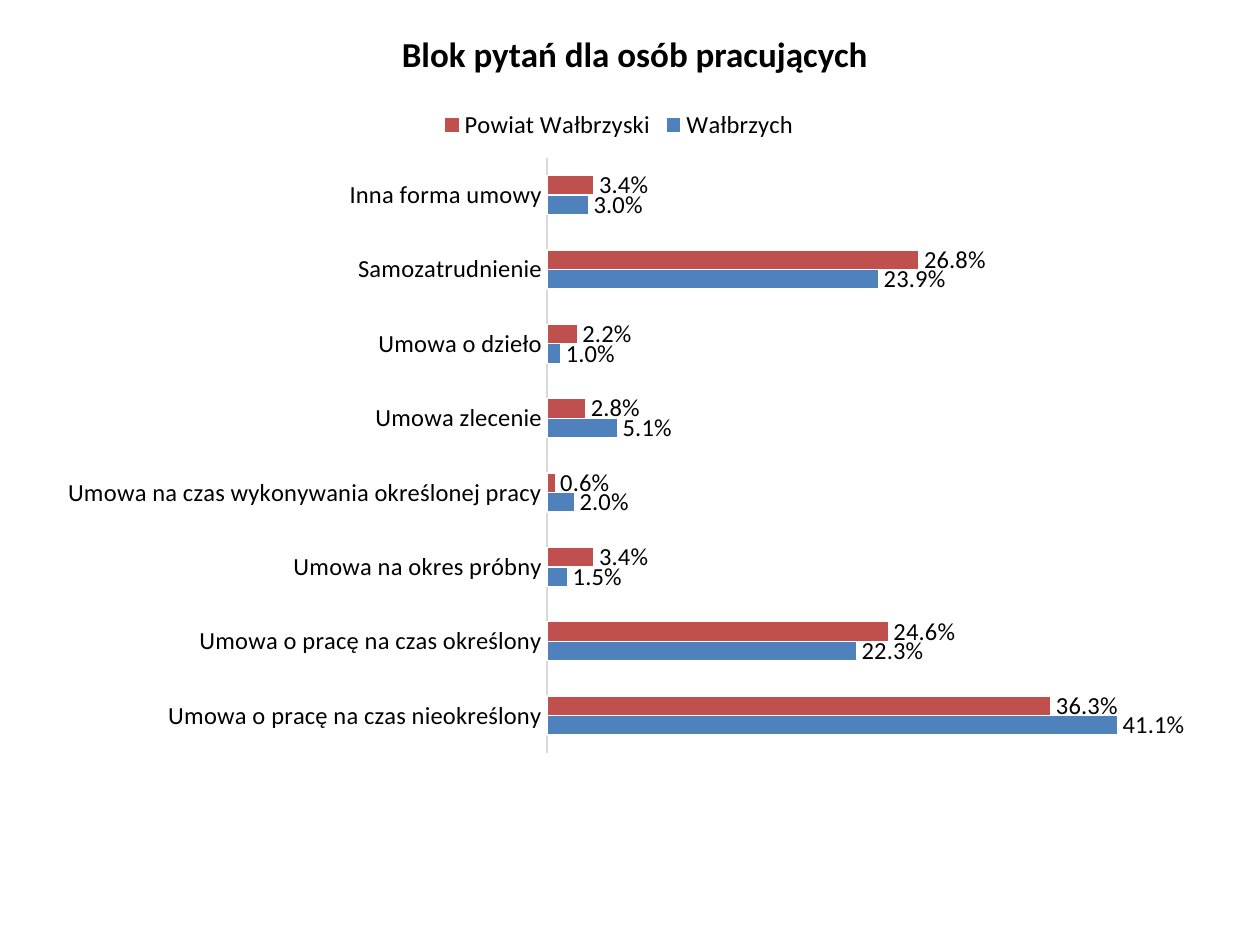
import pptx
import pptx.util
import pptx.dml.color
import pptx.enum.text
import pptx.enum.chart
import pptx.chart.data
import pptx.oxml

RGB = pptx.dml.color.RGBColor
BLACK = RGB(0x00, 0x00, 0x00)
WHITE = RGB(0xFF, 0xFF, 0xFF)
GREY = RGB(0xD9, 0xD9, 0xD9)
BLUE = RGB(0x4F, 0x81, 0xBD)
RED = RGB(0xC0, 0x50, 0x4D)
SCALE = 914400 // 126
CHART_NS = "http://schemas.openxmlformats.org/drawingml/2006/chart"

KINDS = [
    "Umowa o pracę na czas nieokreślony",
    "Umowa o pracę na czas określony",
    "Umowa na okres próbny",
    "Umowa na czas wykonywania określonej pracy",
    "Umowa zlecenie",
    "Umowa o dzieło",
    "Samozatrudnienie",
    "Inna forma umowy",
]
SERIES = [
    ("Wałbrzych", BLUE, (0.411, 0.223, 0.015, 0.02, 0.051, 0.01, 0.239, 0.03)),
    ("Powiat Wałbrzyski", RED,
     (0.363, 0.246, 0.034, 0.006, 0.028, 0.022, 0.268, 0.034)),
]


class Deck:
    font = "Calibri"

    def __init__(self, wide, high):
        self.show = pptx.Presentation()
        self.show.slide_width = wide * SCALE
        self.show.slide_height = high * SCALE
        self.slide = self.show.slides.add_slide(self.show.slide_layouts[6])

    def style(self, font, size, bold=False):
        font.name = self.font
        font.size = pptx.util.Pt(size)
        font.bold = bold
        font.color.rgb = BLACK

    def title(self, text, box, size):
        frame = self.slide.shapes.add_textbox(*(n * SCALE for n in box)).text_frame
        frame.word_wrap = True
        frame.auto_size = pptx.enum.text.MSO_AUTO_SIZE.SHAPE_TO_FIT_TEXT
        line = frame.paragraphs[0]
        line.text = text
        line.alignment = pptx.enum.text.PP_ALIGN.CENTER
        self.style(line.runs[0].font, size, bold=True)

    def bars(self, kinds, series, box, plot, size):
        data = pptx.chart.data.CategoryChartData(number_format="0.0%")
        data.categories = kinds
        for name, _, values in series:
            data.add_series(name, values)
        chart = self.slide.shapes.add_chart(
            pptx.enum.chart.XL_CHART_TYPE.BAR_CLUSTERED,
            *(n * SCALE for n in box), data).chart
        self.style(chart.font, size)
        chart.has_title = False
        chart.has_legend = True
        chart.legend.position = pptx.enum.chart.XL_LEGEND_POSITION.TOP
        chart.legend.include_in_layout = False
        self.axes(chart)
        bars = chart.plots[0]
        bars.gap_width = 182
        bars.vary_by_categories = False
        for item, (_, color, _) in zip(bars.series, series):
            self.paint(item, color)
        self.place(chart, box, plot)

    def axes(self, chart):
        none = pptx.enum.chart.XL_TICK_MARK.NONE
        kinds = chart.category_axis
        kinds.major_tick_mark = none
        kinds.minor_tick_mark = none
        kinds.format.line.color.rgb = GREY
        kinds.format.line.width = pptx.util.Pt(0.75)
        values = chart.value_axis
        values.minimum_scale = 0
        values.maximum_scale = 0.45
        values.has_major_gridlines = False
        values.visible = False

    def paint(self, item, color):
        item.format.fill.solid()
        item.format.fill.fore_color.rgb = color
        item.format.line.color.rgb = WHITE
        item.format.line.width = pptx.util.Pt(0.75)
        labels = item.data_labels
        labels.show_value = True
        labels.number_format = "0.0%"
        labels.number_format_is_linked = False
        labels.position = pptx.enum.chart.XL_LABEL_POSITION.OUTSIDE_END

    def place(self, chart, box, plot):
        """Fix the inner plot area at the slide position given by plot."""
        left, top, wide, high = box
        parts = {
            "x": (plot[0] - left) / wide,
            "y": (plot[1] - top) / high,
            "w": plot[2] / wide,
            "h": plot[3] / high,
        }
        tags = '<c:layoutTarget val="inner"/><c:xMode val="edge"/><c:yMode val="edge"/>'
        tags += "".join(f'<c:{key} val="{n:.4f}"/>' for key, n in parts.items())
        layout = pptx.oxml.parse_xml(
            f'<c:layout xmlns:c="{CHART_NS}"><c:manualLayout>{tags}'
            "</c:manualLayout></c:layout>")
        area = chart._chartSpace.chart.plotArea
        for old in area.findall(f"{{{CHART_NS}}}layout"):
            area.remove(old)
        area.insert(0, layout)


def main():
    deck = Deck(1260, 945)
    deck.title("Blok pytań dla osób pracujących", (243, 26, 784, 55), 20)
    deck.bars(KINDS, SERIES, (44, 96, 1150, 672), (547, 158, 625, 595), 14)
    deck.show.save("out.pptx")


if __name__ == "__main__":
    main()
